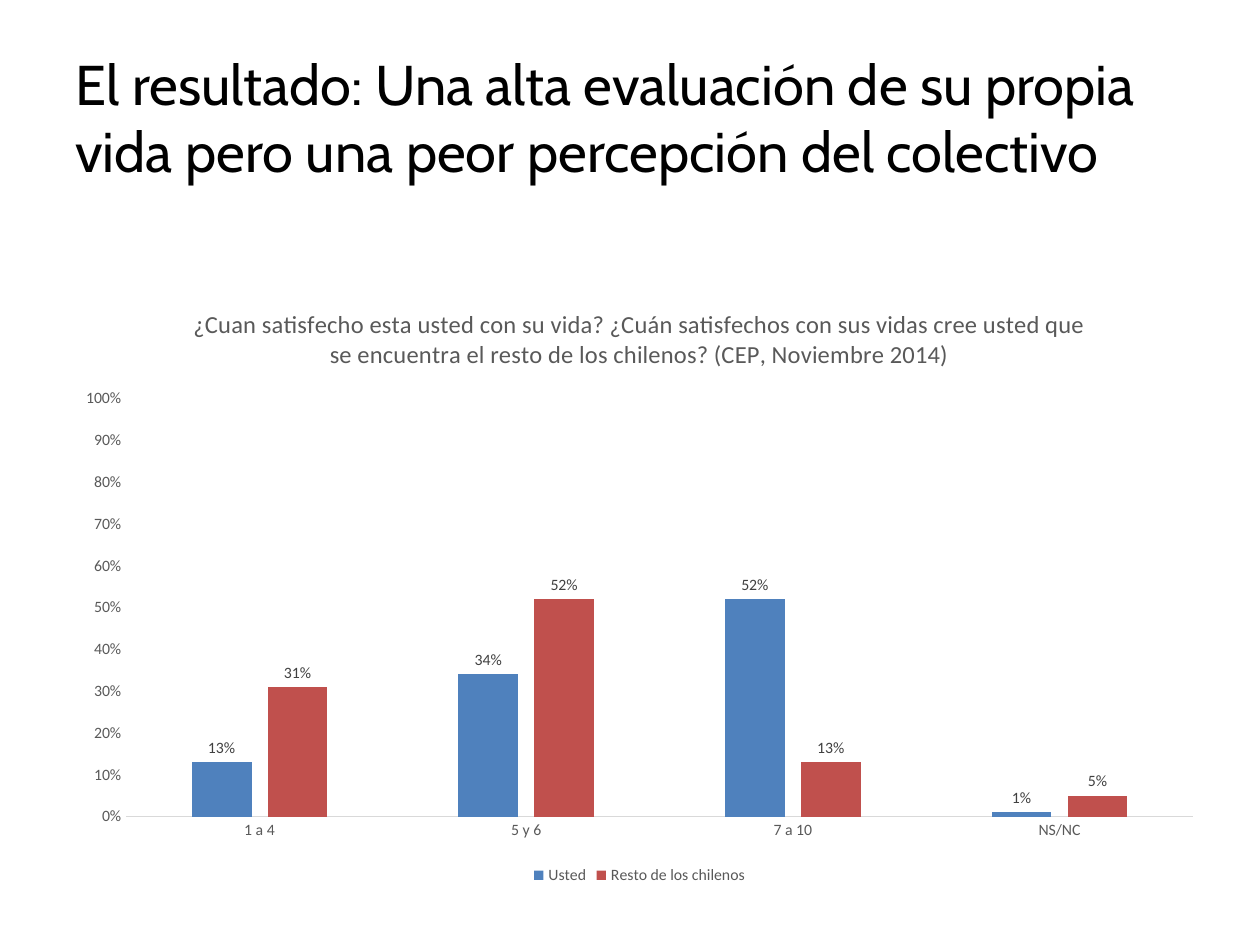
"""Build a slide comparing own and perceived life satisfaction in a column chart."""
from typing import NamedTuple

from pptx import Presentation
from pptx.chart.data import CategoryChartData
from pptx.dml.color import RGBColor
from pptx.enum import chart as ch, text
from pptx.util import Inches, Pt


class Series(NamedTuple):
    name: str
    values: tuple[float, ...]
    color: str


CATEGORIES = ("1 a 4", "5 y 6", "7 a 10", "NS/NC")
SERIES = (
    Series("Usted", (0.13, 0.34, 0.52, 0.01), "4F81BD"),
    Series("Resto de los chilenos", (0.31, 0.52, 0.13, 0.05), "C0504D"),
)
HEADING = "El resultado: Una alta evaluación de su propia vida pero una peor percepción del colectivo"
QUESTION = (
    "¿Cuan satisfecho esta usted con su vida? ¿Cuán satisfechos con sus vidas cree usted "
    "que se encuentra el resto de los chilenos? (CEP, Noviembre 2014)"
)
GREY = "595959"


def rgb(color: str) -> RGBColor:
    return RGBColor.from_string(color)


def set_font(font, size: float, color: str, name: str = "Calibri") -> None:
    font.size, font.name, font.bold = Pt(size), name, False
    font.color.rgb = rgb(color)


def add_heading(s) -> None:
    tf = s.shapes.add_textbox(Inches(0.5), Inches(0.3), Inches(9), Inches(1.25)).text_frame
    tf.word_wrap = True
    tf.vertical_anchor = text.MSO_ANCHOR.MIDDLE
    p = tf.paragraphs[0]
    p.text = HEADING
    set_font(p.font, 32, "000000", "Cabin")


def style_axes(chart) -> None:
    for axis in (chart.category_axis, chart.value_axis):
        axis.major_tick_mark = axis.minor_tick_mark = ch.XL_TICK_MARK.NONE
        axis.has_major_gridlines = False
        set_font(axis.tick_labels.font, 9, GREY)
    line = chart.category_axis.format.line
    line.color.rgb, line.width = rgb("D9D9D9"), Pt(0.75)
    values = chart.value_axis
    values.format.line.fill.background()
    values.minimum_scale, values.maximum_scale, values.major_unit = 0, 1, 0.1
    values.tick_labels.number_format = "0%"
    values.tick_labels.number_format_is_linked = False


def style_series(series, color: str) -> None:
    series.format.fill.solid()
    series.format.fill.fore_color.rgb = rgb(color)
    series.invert_if_negative = False
    labels = series.data_labels
    labels.show_value = True
    labels.number_format, labels.number_format_is_linked = "0%", False
    labels.position = ch.XL_LABEL_POSITION.OUTSIDE_END
    set_font(labels.font, 9, "404040")


def add_satisfaction_chart(s) -> None:
    data = CategoryChartData(number_format="0%")
    data.categories = CATEGORIES
    for item in SERIES:
        data.add_series(item.name, item.values)
    chart = s.shapes.add_chart(
        ch.XL_CHART_TYPE.COLUMN_CLUSTERED,
        Inches(0.5), Inches(2.25), Inches(9.15), Inches(4.81), data,
    ).chart
    set_font(chart.font, 10, "000000")

    chart.has_title = True
    chart.chart_title.include_in_layout = False
    p = chart.chart_title.text_frame.paragraphs[0]
    p.text = QUESTION
    set_font(p.font, 14, GREY)

    chart.has_legend = True
    chart.legend.position = ch.XL_LEGEND_POSITION.BOTTOM
    chart.legend.include_in_layout = False
    set_font(chart.legend.font, 9, GREY)

    plot = chart.plots[0]
    plot.gap_width, plot.overlap, plot.vary_by_categories = 219, -27, False
    style_axes(chart)
    for series, item in zip(plot.series, SERIES):
        style_series(series, item.color)


def main() -> None:
    prs = Presentation()
    prs.slide_width, prs.slide_height = Inches(10), Inches(7.5)
    s = prs.slides.add_slide(prs.slide_layouts[6])
    add_heading(s)
    add_satisfaction_chart(s)
    prs.save("out.pptx")


if __name__ == "__main__":
    main()
